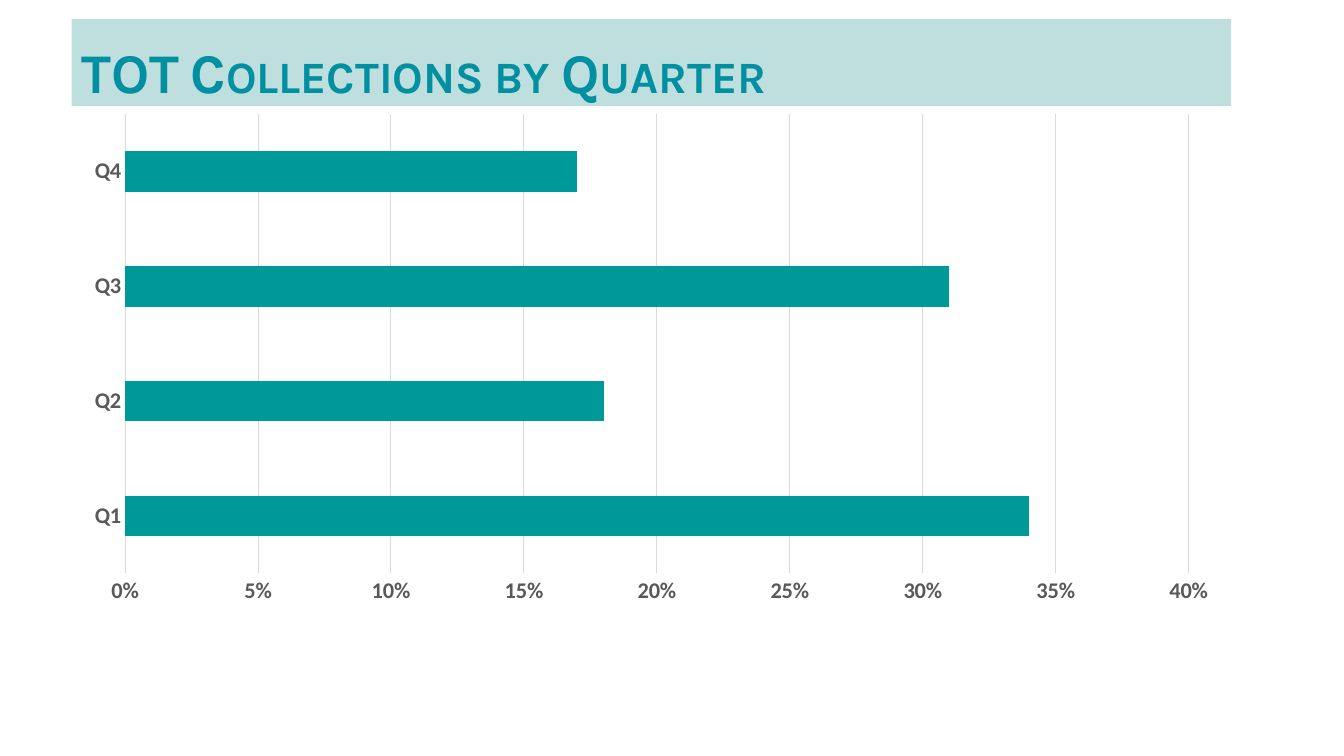
from lxml import etree
from pptx import Presentation
from pptx import util as u
from pptx.chart import data
from pptx.dml.color import RGBColor
from pptx.enum import chart as ch, text
from pptx.oxml import ns

HUES = {"teal": "009999", "band": "008080", "title": "0090A1",
        "text": "595959", "grid": "D9D9D9", "black": "000000"}
LEFT, WIDE = 0.71, 11.5


def hue(name):
    return RGBColor.from_string(HUES[name])


def put(obj, **vals):
    for key, val in vals.items():
        setattr(obj, key, val)


class Deck:
    def __init__(self):
        self.prs = Presentation()
        put(self.prs, slide_width=u.Inches(13.33), slide_height=u.Inches(7.5))
        self.slide = self.prs.slides.add_slide(self.prs.slide_layouts[5])

    def font(self, font, face, size, name, bold=True):
        put(font, name=face, size=u.Pt(size), bold=bold)
        font.color.rgb = hue(name)

    def line(self, form):
        form.line.color.rgb = hue("grid")
        form.line.width = u.Pt(0.75)

    def title(self, words, top, high):
        box = self.slide.shapes.title
        put(box, left=u.Inches(LEFT), top=u.Inches(top),
            width=u.Inches(WIDE), height=u.Inches(high))
        # Translucent band
        box.fill.solid()
        box.fill.fore_color.rgb = hue("band")
        tint = box.fill._xPr.find(".//" + ns.qn("a:srgbClr"))
        etree.SubElement(tint, ns.qn("a:alpha")).set("val", "25000")
        # Small-cap heading
        frame = box.text_frame
        put(frame, vertical_anchor=text.MSO_ANCHOR.MIDDLE, word_wrap=True,
            auto_size=text.MSO_AUTO_SIZE.SHAPE_TO_FIT_TEXT)
        para = frame.paragraphs[0]
        put(para, alignment=text.PP_ALIGN.LEFT, line_spacing=1.25)
        run = para.add_run()
        run.text = words
        self.font(run.font, "Karla", 40, "title")
        run._r.get_or_add_rPr().set("cap", "small")
        # Keep the heading in front of the chart
        box.element.getparent().append(box.element)

    def bars(self, cats, vals, top, high):
        info = data.CategoryChartData(number_format="0%")
        info.categories = cats
        info.add_series("Series 1", vals)
        chart = self.slide.shapes.add_chart(
            ch.XL_CHART_TYPE.BAR_CLUSTERED, u.Inches(LEFT), u.Inches(top),
            u.Inches(WIDE), u.Inches(high), info).chart
        put(chart, has_legend=False, has_title=False)
        self.font(chart.font, "Calibri", 10, "black", False)
        # Bars
        plot = chart.plots[0]
        put(plot, gap_width=182, vary_by_categories=False)
        fill = plot.series[0].format.fill
        fill.solid()
        fill.fore_color.rgb = hue("teal")
        # Axes and grid
        cat, val = chart.category_axis, chart.value_axis
        for axis in (cat, val):
            put(axis, major_tick_mark=ch.XL_TICK_MARK.NONE,
                minor_tick_mark=ch.XL_TICK_MARK.NONE)
            self.font(axis.tick_labels.font, "Calibri", 16, "text")
        self.line(cat.format)
        put(val, minimum_scale=0, maximum_scale=0.4, major_unit=0.05,
            has_major_gridlines=True)
        self.line(val.major_gridlines.format)
        val.format.line.fill.background()
        put(val.tick_labels, number_format="0%", number_format_is_linked=False)


def main():
    deck = Deck()
    deck.bars(["Q1", "Q2", "Q3", "Q4"], [0.34, 0.18, 0.31, 0.17], 1.03, 5.07)
    deck.title("TOT Collections by Quarter", 0.19, 0.86)
    deck.prs.save("out.pptx")


if __name__ == "__main__":
    main()
